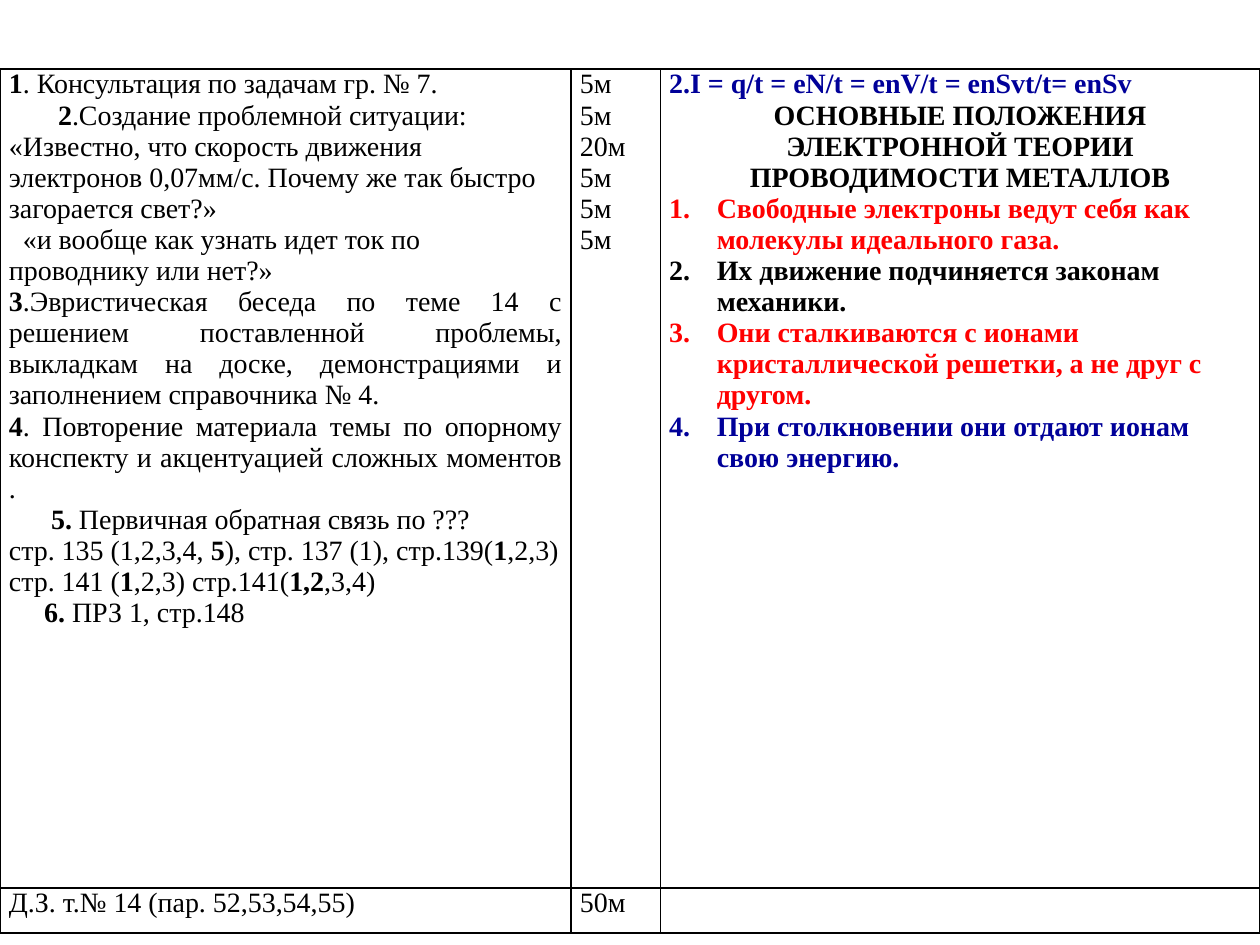
from lxml.etree import SubElement
from pptx import Presentation
from pptx.dml.color import RGBColor
from pptx.enum.text import PP_ALIGN as Align
from pptx.oxml.ns import qn
from pptx.util import Cm, Pt

COLORS = {"text": "000000", "blue": "000099", "red": "FF0000", "border": "000000"}
FONT = {"name": "Times New Roman", "size": Pt(16)}
MARGINS = {"margin_left": Cm(0.18), "margin_right": Cm(0.18),
           "margin_top": 0, "margin_bottom": 0}
TABLE_BOX = (Cm(0), Cm(1.39), Cm(25.4), Cm(17.42))
COLUMN_WIDTHS = (11.51, 1.8, 12.09)
ROW_HEIGHTS = (16.51, 0.91)
LIST_INDENT = 0.96

# Text between asterisks is bold.
LESSON_STEPS = [
    {"text": "*1*. Консультация по задачам гр. № 7."},
    {"text": "*2*.Создание проблемной ситуации: «Известно, что скорость движения "
             "электронов 0,07мм/с. Почему же так быстро загорается свет?»",
     "indent": 0.99},
    {"text": "«и вообще как узнать идет ток по проводнику или нет?»", "indent": 0.28},
    {"text": "*3*.Эвристическая беседа по теме 14 с решением поставленной проблемы, "
             "выкладкам на доске, демонстрациями и заполнением справочника № 4.",
     "align": Align.JUSTIFY},
    {"text": "*4*. Повторение материала темы по опорному конспекту и акцентуацией "
             "сложных моментов .", "align": Align.JUSTIFY},
    {"text": "*5.* Первичная обратная связь по ???", "indent": 0.85},
    {"text": "стр. 135 (1,2,3,4, *5*), стр. 137 (1), стр.139(*1*,2,3) "
             "стр. 141 (*1*,2,3) стр.141(*1,2*,3,4)"},
    {"text": "*6. *ПРЗ 1, стр.148", "indent": 0.71},
]
DURATIONS = [{"text": f"{minutes}м"} for minutes in (5, 5, 20, 5, 5, 5)]
THEORY = [
    {"text": "*2.I = q/t = eN/t = enV/t = enSvt/t= enSv*", "color": "blue"},
    {"text": "*ОСНОВНЫЕ ПОЛОЖЕНИЯ ЭЛЕКТРОННОЙ ТЕОРИИ ПРОВОДИМОСТИ МЕТАЛЛОВ*",
     "align": Align.CENTER},
] + [
    {"text": f"*{statement}*", "color": color, "numbered": True}
    for statement, color in (
        ("Свободные электроны ведут себя как молекулы идеального газа.", "red"),
        ("Их движение подчиняется законам механики.", "text"),
        ("Они сталкиваются с ионами кристаллической решетки, а не друг с другом.", "red"),
        ("При столкновении они отдают ионам свою энергию.", "blue"),
    )
]
ROWS = [
    [LESSON_STEPS, DURATIONS, THEORY],
    [[{"text": "Д.З. т.№ 14 (пар. 52,53,54,55)"}], [{"text": "50м"}], []],
]


def set_attributes(target, values):
    for name, value in values.items():
        setattr(target, name, value)


def write_paragraph(paragraph, text, color="text", align=Align.LEFT, indent=0,
                    numbered=False):
    paragraph.alignment = align
    properties = paragraph._p.get_or_add_pPr()
    margin = LIST_INDENT if numbered else 0
    properties.set("marL", str(Cm(margin)))
    properties.set("indent", str(Cm(indent - margin)))
    if numbered:
        SubElement(properties, qn("a:buAutoNum"), type="arabicPeriod")
    for index, part in enumerate(text.split("*")):
        if part:
            run = paragraph.add_run()
            run.text = part
            set_attributes(run.font, {**FONT, "bold": index % 2 == 1})
            run.font.color.rgb = RGBColor.from_string(COLORS[color])


def format_cell(cell):
    set_attributes(cell, MARGINS)
    properties = cell._tc.get_or_add_tcPr()
    for side in ("lnL", "lnR", "lnT", "lnB"):
        line = SubElement(properties, qn(f"a:{side}"), w=str(Pt(1)))
        fill = SubElement(line, qn("a:solidFill"))
        SubElement(fill, qn("a:srgbClr"), val=COLORS["border"])
    cell.fill.background()


def add_lesson_table(slide, box):
    table = slide.shapes.add_table(len(ROWS), len(COLUMN_WIDTHS), *box).table
    set_attributes(table, {"first_row": False, "horz_banding": False})
    for column, width in zip(table.columns, COLUMN_WIDTHS):
        column.width = Cm(width)
    for row, height, contents in zip(table.rows, ROW_HEIGHTS, ROWS):
        row.height = Cm(height)
        for cell, paragraphs in zip(row.cells, contents):
            format_cell(cell)
            frame = cell.text_frame
            for index, paragraph in enumerate(paragraphs):
                target = frame.add_paragraph() if index else frame.paragraphs[0]
                write_paragraph(target, **paragraph)


def main():
    presentation = Presentation()
    set_attributes(presentation, {"slide_width": Cm(25.4), "slide_height": Cm(19.05)})
    slide = presentation.slides.add_slide(presentation.slide_layouts[6])
    add_lesson_table(slide, TABLE_BOX)
    presentation.save("out.pptx")


if __name__ == "__main__":
    main()
